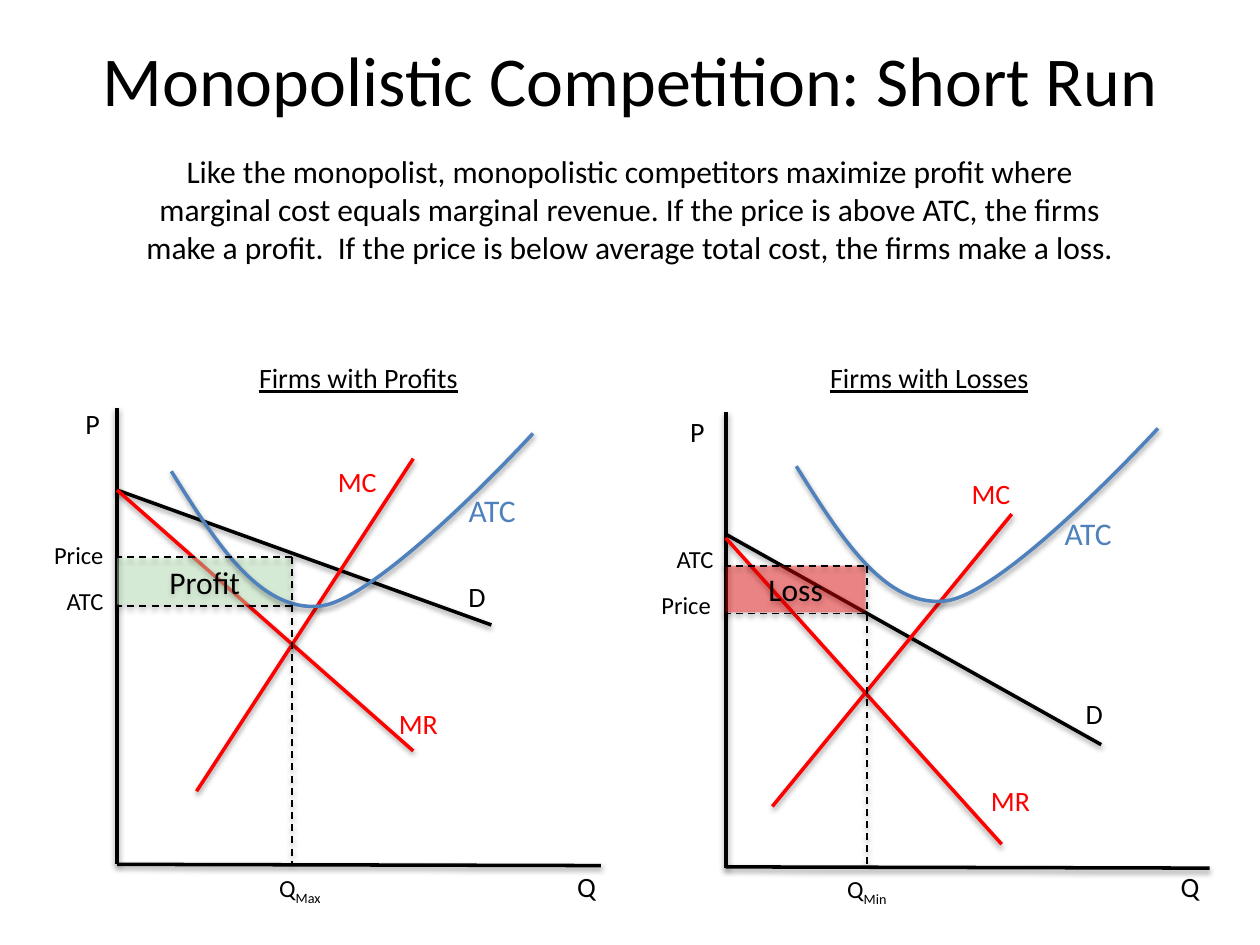
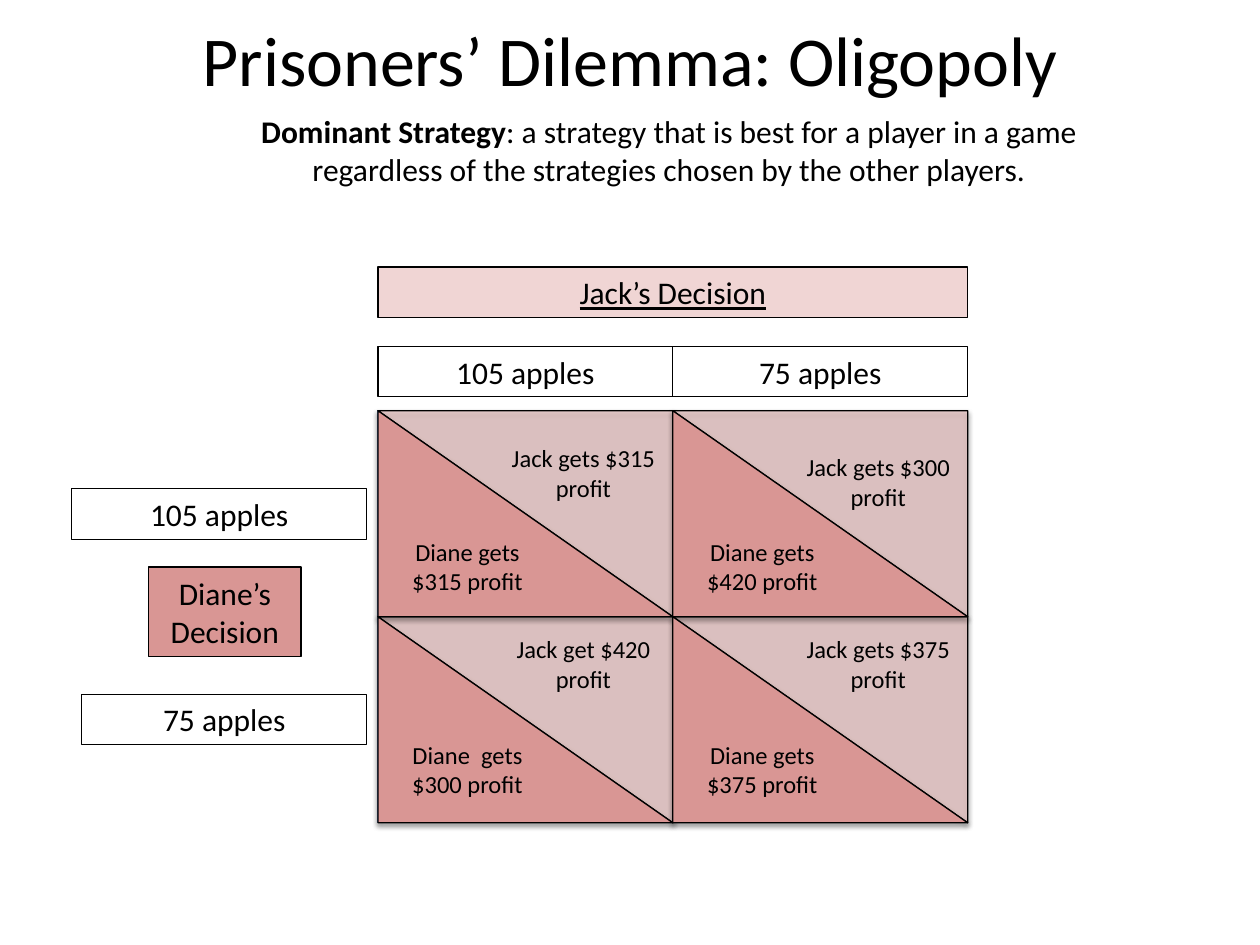
from dataclasses import dataclass
from itertools import product

from lxml import etree
from pptx import Presentation
from pptx.dml.color import RGBColor
from pptx.enum.dml import MSO_LINE
from pptx.enum.shapes import MSO_CONNECTOR, MSO_SHAPE
from pptx.enum.text import MSO_ANCHOR, PP_ALIGN
from pptx.oxml import parse_xml
from pptx.oxml.ns import nsdecls, qn
from pptx.util import Inches, Pt

LEFT, CENTER, RIGHT = PP_ALIGN.LEFT, PP_ALIGN.CENTER, PP_ALIGN.RIGHT
RECTANGLE, TRIANGLE = MSO_SHAPE.RECTANGLE, MSO_SHAPE.RIGHT_TRIANGLE
STRAIGHT, DASH = MSO_CONNECTOR.STRAIGHT, MSO_LINE.DASH
MIDDLE = MSO_ANCHOR.MIDDLE
TITLE_ONLY = 5

Point = tuple[float, float]


@dataclass(frozen=True)
class Theme:
    font: str = "Calibri"
    ink: str = "000000"
    marginal: str = "FF0000"
    average: str = "4F81BD"
    profit: str = "CCFFCC"
    loss: str = "FF0000"
    jack: str = "E6B9B8"
    diane: str = "D99694"
    cell_edge: str = "4B7EBC"
    title_size: int = 40
    body_size: int = 18
    label_size: int = 16
    small_size: int = 14
    curve_width: float = 2
    guide_width: float = 1
    edge_width: float = 0.75
    line_shadow: int = 38
    shape_shadow: int = 35


THEME = Theme()


@dataclass(frozen=True)
class Label:
    text: str
    left: float
    top: float
    width: float
    size: int = THEME.label_size
    color: str = THEME.ink
    align: PP_ALIGN = CENTER
    lines: int = 1
    underline: bool = False

    @property
    def height(self) -> float:
        return round(self.lines * self.size * 1.2 / 72 + 0.1, 2)


@dataclass(frozen=True)
class Segment:
    start: Point
    end: Point
    color: str = THEME.ink


@dataclass(frozen=True)
class Area:
    text: str
    left: float
    top: float
    width: float
    height: float
    color: str


@dataclass(frozen=True)
class FirmGraph:
    segments: tuple[Segment, ...]
    area: Area
    guides: tuple[Segment, ...]
    atc_start: Point
    labels: tuple[Label, ...]
    quantity: Label
    quantity_subscript: str


@dataclass(frozen=True)
class Outcome:
    jack: str
    jack_offset: float
    diane: str
    diane_offset: float


@dataclass(frozen=True)
class Choice:
    text: str
    left: float
    top: float
    width: float
    height: float = 0.4
    fill: str | None = None
    alpha: int = 100
    underline: bool = False


PROFIT_GRAPH = FirmGraph(
    segments=(
        Segment((0.93, 3.24), (0.93, 6.86)),
        Segment((0.93, 6.86), (4.77, 6.87)),
        Segment((0.93, 3.89), (3.9, 4.96)),
        Segment((0.93, 3.89), (3.28, 5.96), THEME.marginal),
        Segment((1.56, 6.28), (3.28, 3.64), THEME.marginal),
    ),
    area=Area("Profit", 0.93, 4.43, 1.39, 0.37, THEME.profit),
    guides=(
        Segment((2.32, 4.42), (2.32, 6.86)),
        Segment((2.32, 4.42), (0.93, 4.42)),
        Segment((2.32, 4.81), (0.93, 4.81)),
    ),
    atc_start=(1.36, 3.74),
    labels=(
        Label("Firms with Profits", 1.08, 2.81, 3.53, underline=True),
        Label("P", 0.47, 3.18, 0.53),
        Label("Q", 4.39, 6.85, 0.53),
        Label("D", 3, 4.55, 1.57),
        Label("MR", 2.43, 5.56, 1.78, color=THEME.marginal),
        Label("MC", 2.21, 3.64, 1.25, color=THEME.marginal),
        Label("ATC", 3.62, 3.85, 1.11, THEME.body_size, THEME.average, LEFT),
        Label("Price", -0.23, 4.24, 1.15, THEME.small_size, align=RIGHT),
        Label("ATC", -0.23, 4.6, 1.15, THEME.small_size, align=RIGHT),
    ),
    quantity=Label("Q", 1.31, 6.88, 2.14, THEME.small_size),
    quantity_subscript="Max",
)

LOSS_GRAPH = FirmGraph(
    segments=(
        Segment((5.76, 3.27), (5.76, 6.89)),
        Segment((5.76, 6.88), (9.6, 6.89)),
        Segment((5.76, 4.24), (8.74, 5.91)),
        Segment((5.76, 4.27), (7.95, 6.7), THEME.marginal),
        Segment((6.13, 6.4), (8.03, 4.08), THEME.marginal),
    ),
    area=Area("Loss", 5.76, 4.49, 1.11, 0.37, THEME.loss),
    guides=(
        Segment((6.88, 4.49), (6.88, 6.86)),
        Segment((6.86, 4.49), (5.74, 4.49)),
        Segment((6.86, 4.87), (5.74, 4.87)),
    ),
    atc_start=(6.32, 3.7),
    labels=(
        Label("Firms with Losses", 5.38, 2.81, 3.99, underline=True),
        Label("P", 5.27, 3.24, 0.53),
        Label("Q", 9.18, 6.85, 0.53),
        Label("D", 7.9, 5.48, 1.57),
        Label("MR", 7.13, 6.17, 1.78, color=THEME.marginal),
        Label("MC", 7.24, 3.73, 1.25, color=THEME.marginal),
        Label("ATC", 8.35, 4.03, 0.88, THEME.body_size, THEME.average, LEFT),
        Label("Price", 4.59, 4.63, 1.15, THEME.small_size, align=RIGHT),
        Label("ATC", 4.61, 4.27, 1.15, THEME.small_size, align=RIGHT),
    ),
    quantity=Label("Q", 5.81, 6.89, 2.14, THEME.small_size),
    quantity_subscript="Min",
)

# Bezier points of the average total cost curve, relative to its start
ATC_STEPS = ((0.35, 0.56), (0.7, 1.12), (1.18, 1.07), (1.66, 1.02), (2.87, -0.3), (2.87, -0.3))

MATRIX_LEFT, MATRIX_TOP, CELL_WIDTH, CELL_HEIGHT = 3, 3.26, 2.34, 1.635
PAYOFF_WIDTH = 1.42
OUTCOMES = (
    Outcome("Jack gets $315 profit", 0.21, "Diane gets $315 profit", 0.95),
    Outcome("Jack gets $300 profit", 0.28, "Diane gets $420 profit", 0.95),
    Outcome("Jack get $420 profit", 0.09, "Diane  gets $300 profit", 0.93),
    Outcome("Jack gets $375 profit", 0.09, "Diane gets $375 profit", 0.93),
)
CHOICES = (
    Choice("Jack’s Decision", MATRIX_LEFT, 2.12, 2 * CELL_WIDTH, fill=THEME.jack, alpha=60, underline=True),
    Choice("105 apples", MATRIX_LEFT, 2.75, CELL_WIDTH),
    Choice("75 apples", MATRIX_LEFT + CELL_WIDTH, 2.75, CELL_WIDTH),
    Choice("105 apples", 0.57, 3.88, CELL_WIDTH),
    Choice("Diane’s\nDecision", 1.18, 4.5, 1.21, 0.71, THEME.diane),
    Choice("75 apples", 0.65, 5.51, 2.26),
)


def cast_shadow(shape, opacity: int) -> None:
    shape.element.spPr.append(parse_xml(
        f'<a:effectLst {nsdecls("a")}><a:outerShdw blurRad="40000" dist="20000" dir="5400000" rotWithShape="0">'
        f'<a:srgbClr val="000000"><a:alpha val="{opacity * 1000}"/></a:srgbClr></a:outerShdw></a:effectLst>'))


def set_text(frame, text: str, size: int, color: str = THEME.ink,
             align: PP_ALIGN = CENTER, underline: bool = False) -> None:
    frame.text = text
    frame.word_wrap = True
    for paragraph in frame.paragraphs:
        paragraph.alignment = align
        font = paragraph.font
        font.name, font.size = THEME.font, Pt(size)
        font.color.rgb = RGBColor.from_string(color)
        if underline:
            font.underline = True


def add_label(slide, label: Label):
    box = slide.shapes.add_textbox(*map(Inches, (label.left, label.top, label.width, label.height)))
    set_text(box.text_frame, label.text, label.size, label.color, label.align, label.underline)
    return box.text_frame.paragraphs[0]


def add_segment(slide, segment: Segment, width: float, dashed: bool = False) -> None:
    connector = slide.shapes.add_connector(STRAIGHT, *map(Inches, segment.start + segment.end))
    connector.line.color.rgb = RGBColor.from_string(segment.color)
    connector.line.width = Pt(width)
    if dashed:
        connector.line.dash_style = DASH
    cast_shadow(connector, THEME.line_shadow)


def add_panel(slide, kind: MSO_SHAPE, bounds: tuple[float, ...], fill: str | None = None,
              alpha: int = 100, edge: str | None = THEME.ink, shadowed: bool = True):
    """Add a preset shape; no fill or edge colour leaves that part empty."""
    panel = slide.shapes.add_shape(kind, *map(Inches, bounds))
    if fill:
        panel.fill.solid()
        panel.fill.fore_color.rgb = RGBColor.from_string(fill)
        color = panel.element.spPr.find(qn("a:solidFill")).find(qn("a:srgbClr"))
        etree.SubElement(color, qn("a:alpha")).set("val", str(alpha * 1000))
    else:
        panel.fill.background()
    if edge:
        panel.line.color.rgb = RGBColor.from_string(edge)
        panel.line.width = Pt(THEME.edge_width)
    else:
        panel.line.fill.background()
    if shadowed:
        cast_shadow(panel, THEME.shape_shadow)
    else:
        panel.shadow.inherit = False
    return panel


def add_atc_curve(slide, start: Point) -> None:
    points = [(Inches(start[0] + dx), Inches(start[1] + dy)) for dx, dy in ATC_STEPS]
    builder = slide.shapes.build_freeform(Inches(start[0]), Inches(start[1]))
    builder.add_line_segments(points, close=False)
    curve = builder.convert_to_shape()
    steps = list(curve.element.iter(qn("a:lnTo")))
    for first in range(0, len(steps), 3):
        bezier = etree.SubElement(steps[first].getparent(), qn("a:cubicBezTo"))
        for step in steps[first:first + 3]:
            bezier.append(step[0])
            step.getparent().remove(step)
    curve.fill.background()
    curve.line.color.rgb = RGBColor.from_string(THEME.average)
    curve.line.width = Pt(THEME.curve_width)
    cast_shadow(curve, THEME.line_shadow)


def add_titled_slide(deck, title: str, height: float):
    slide = deck.slides.add_slide(deck.slide_layouts[TITLE_ONLY])
    heading = slide.shapes.title
    heading.left, heading.top, heading.width, heading.height = map(Inches, (0, 0, 10, height))
    heading.text_frame.vertical_anchor = MIDDLE
    set_text(heading.text_frame, title, THEME.title_size)
    return slide


def add_graph(slide, graph: FirmGraph) -> None:
    for segment in graph.segments:
        add_segment(slide, segment, THEME.curve_width)
    area = graph.area
    panel = add_panel(slide, RECTANGLE, (area.left, area.top, area.width, area.height), area.color, 40, None)
    set_text(panel.text_frame, area.text, THEME.body_size)
    add_atc_curve(slide, graph.atc_start)
    for guide in graph.guides:
        add_segment(slide, guide, THEME.guide_width, dashed=True)
    for label in graph.labels:
        add_label(slide, label)
    subscript = add_label(slide, graph.quantity).add_run()
    subscript.text = graph.quantity_subscript
    subscript._r.get_or_add_rPr().set("baseline", "-25000")


def add_payoff_matrix(slide) -> None:
    cells = [(MATRIX_LEFT + column * CELL_WIDTH, MATRIX_TOP + row * CELL_HEIGHT, CELL_WIDTH, CELL_HEIGHT)
             for row, column in product(range(2), repeat=2)]
    for cell in cells:
        add_panel(slide, RECTANGLE, cell, edge=THEME.cell_edge)
    for cell in cells:
        add_panel(slide, TRIANGLE, cell, THEME.jack, 60).rotation = 180
    for cell in cells:
        add_panel(slide, TRIANGLE, cell, THEME.diane)
    for (left, top, width, _), outcome in zip(cells, OUTCOMES):
        for text, x, offset in ((outcome.jack, left + width - PAYOFF_WIDTH, outcome.jack_offset),
                                (outcome.diane, left, outcome.diane_offset)):
            add_label(slide, Label(text, x, top + offset, PAYOFF_WIDTH, THEME.small_size, lines=2))


def main() -> None:
    deck = Presentation()
    deck.slide_width, deck.slide_height = Inches(10), Inches(7.5)

    short_run = add_titled_slide(deck, "Monopolistic Competition: Short Run", 1.25)
    add_label(short_run, Label(
        "Like the monopolist, monopolistic competitors maximize profit where marginal cost equals marginal "
        "revenue. If the price is above ATC, the firms make a profit.  If the price is below average total "
        "cost, the firms make a loss.", 0.97, 1.16, 8.06, THEME.body_size, lines=3))
    for graph in (PROFIT_GRAPH, LOSS_GRAPH):
        add_graph(short_run, graph)

    dilemma = add_titled_slide(deck, "Prisoners’ Dilemma: Oligopoly", 0.93)
    definition = add_label(dilemma, Label("Dominant Strategy", 1.54, 0.84, 7.54, THEME.body_size, lines=2))
    definition.runs[0].font.bold = True
    definition.add_run().text = (": a strategy that is best for a player in a game regardless of "
                                 "the strategies chosen by the other players.")
    add_payoff_matrix(dilemma)
    for choice in CHOICES:
        panel = add_panel(dilemma, RECTANGLE, (choice.left, choice.top, choice.width, choice.height),
                          choice.fill, choice.alpha, shadowed=False)
        set_text(panel.text_frame, choice.text, THEME.body_size, underline=choice.underline)
    deck.save("out.pptx")


if __name__ == "__main__":
    main()
